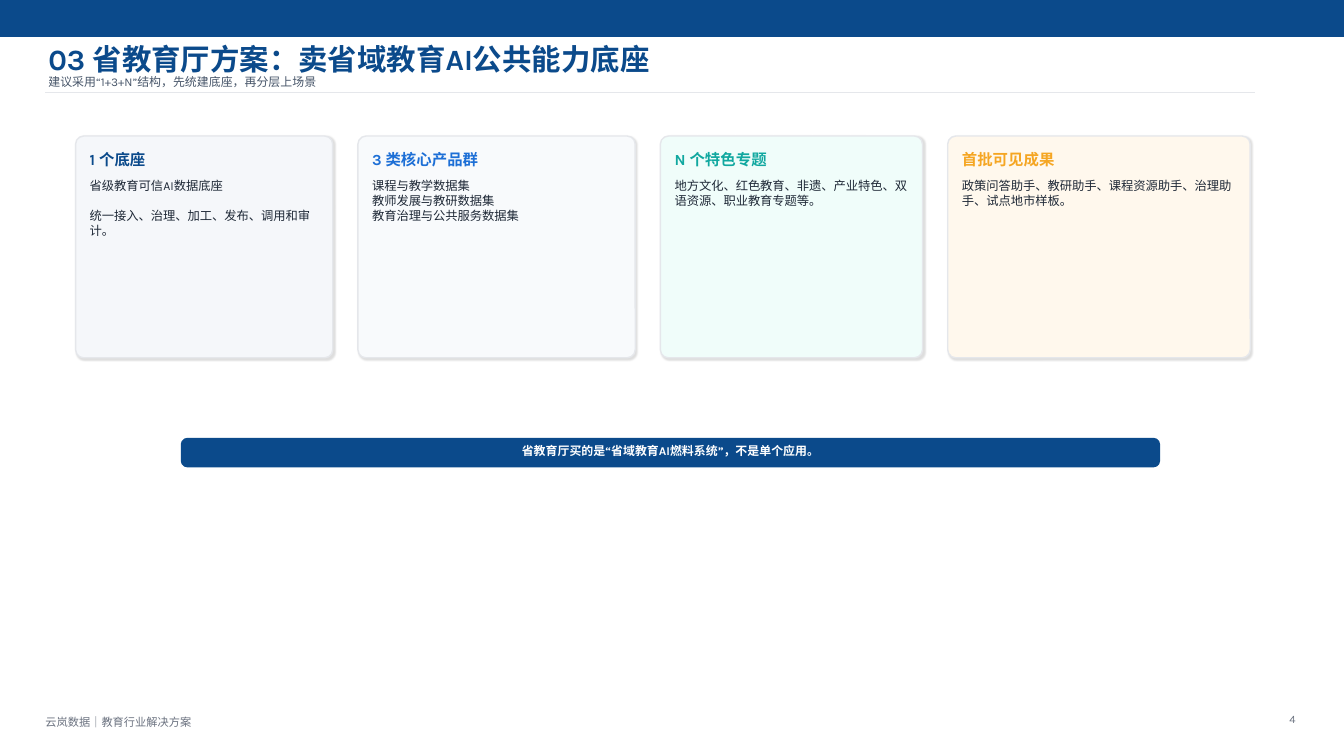
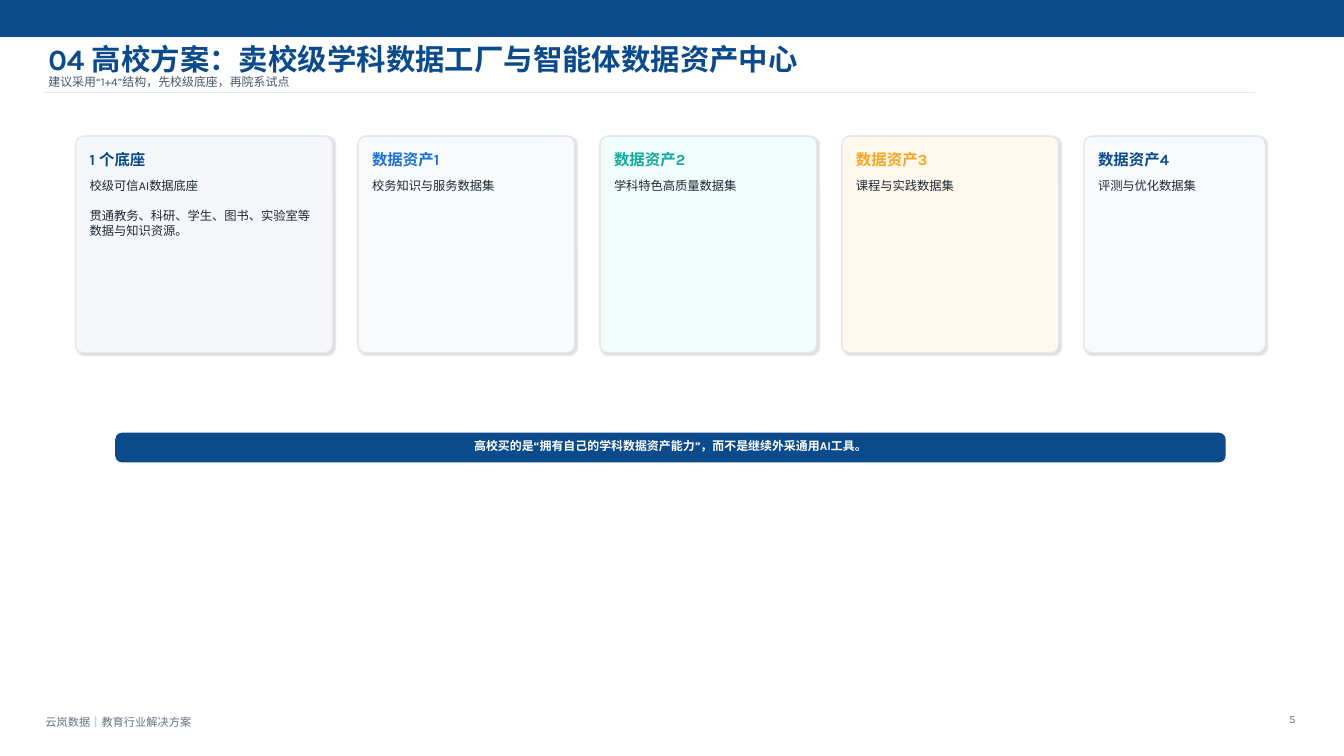
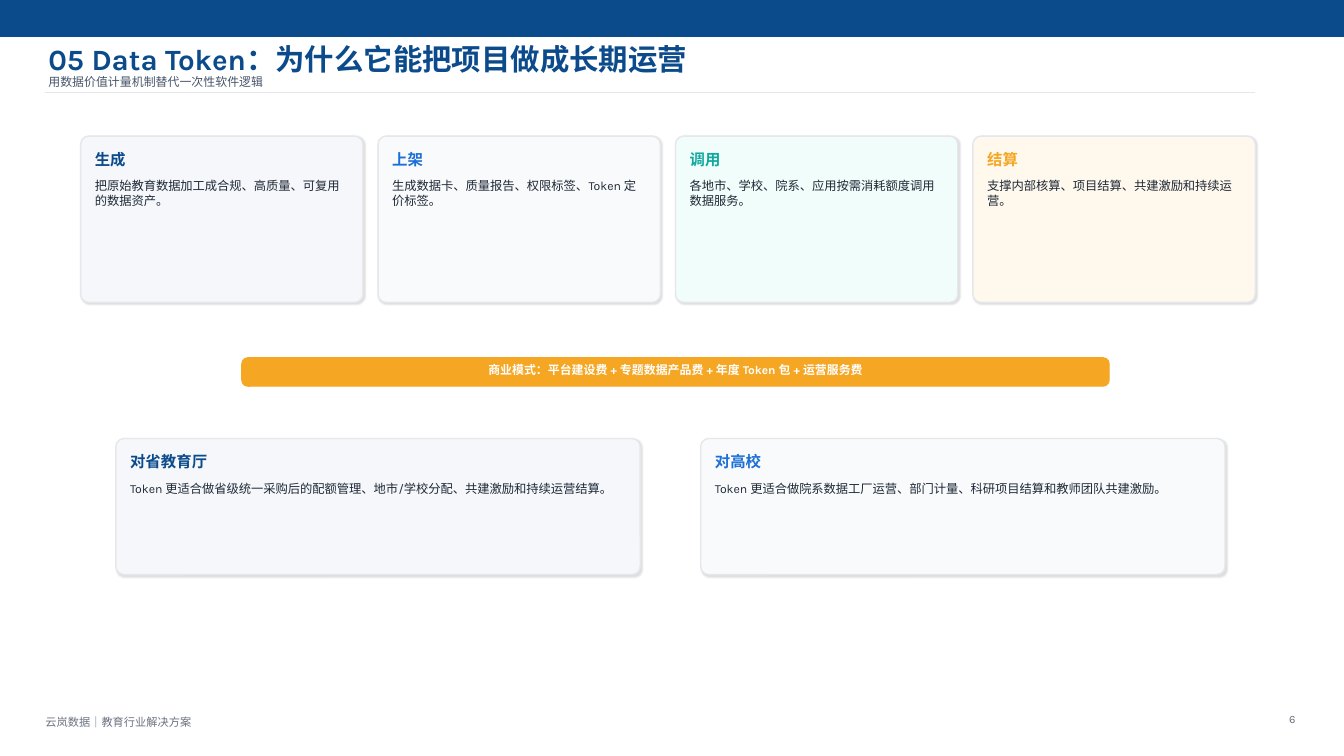
from dataclasses import dataclass
from itertools import accumulate

from lxml.etree import SubElement
from pptx import Presentation
from pptx.dml.color import RGBColor
from pptx.enum.shapes import MSO_CONNECTOR as Connector
from pptx.enum.shapes import MSO_SHAPE as Shape
from pptx.enum.text import MSO_ANCHOR as Anchor
from pptx.enum.text import MSO_AUTO_SIZE as AutoSize
from pptx.enum.text import PP_ALIGN as Align
from pptx.oxml.ns import qn
from pptx.util import Inches, Pt


@dataclass(frozen=True)
class Theme:
    font: str = "Karla"
    navy: str = "0B4A8B"
    blue: str = "1D6FD6"
    teal: str = "11A8A0"
    amber: str = "F5A623"
    white: str = "FFFFFF"
    ink: str = "1F2937"
    slate: str = "475569"
    muted: str = "6B7280"
    border: str = "E5E7EB"
    mist: str = "F5F7FA"
    snow: str = "F8FAFC"
    mint: str = "F0FDFA"
    cream: str = "FFF8ED"
    title_size: float = 21
    heading_size: float = 11
    body_size: float = 8.8
    note_size: float = 8.5
    footer_size: float = 8
    section_gap: float = 10.7


THEME = Theme()
CARD_STYLES = [
    (THEME.mist, THEME.navy),
    (THEME.snow, THEME.blue),
    (THEME.mint, THEME.teal),
    (THEME.cream, THEME.amber),
    (THEME.snow, THEME.navy),
]
FOOTER = "云岚数据｜教育行业解决方案"
CARD_TOP = 1.35


def rgb(value):
    return RGBColor.from_string(value)


def place(shape, left, top, width, height):
    shape.left, shape.top = Inches(left), Inches(top)
    shape.width, shape.height = Inches(width), Inches(height)


def write(shape, lines, size, color, bold=False, align=Align.LEFT,
          anchor=Anchor.MIDDLE, gap=0, margins=(0, 0, 0, 0)):
    frame = shape.text_frame
    frame.word_wrap = True
    frame.auto_size = AutoSize.NONE
    frame.vertical_anchor = anchor
    left, top, right, bottom = map(Inches, margins)
    frame.margin_left, frame.margin_top = left, top
    frame.margin_right, frame.margin_bottom = right, bottom
    for index, line in enumerate(lines):
        para = frame.add_paragraph() if index else frame.paragraphs[0]
        para.alignment = align
        para.space_before = Pt(gap if index else 0)
        span = para.add_run()
        span.text = line
        font = span.font
        font.size, font.bold, font.name = Pt(size), bold, THEME.font
        font.color.rgb = rgb(color)
        for script in ("a:ea", "a:cs"):
            SubElement(span.font._element, qn(script), typeface=THEME.font)


def add_text(page, area, lines, size, color, **options):
    box = page.shapes.add_textbox(*map(Inches, area))
    write(box, lines, size, color, **options)


def add_panel(page, kind, area, fill, line, radius=0):
    panel = page.shapes.add_shape(kind, *map(Inches, area))
    panel.shadow.inherit = False
    panel.fill.solid()
    panel.fill.fore_color.rgb = rgb(fill)
    panel.line.color.rgb = rgb(line)
    panel.line.width = Pt(1)
    if radius:
        panel.adjustments[0] = radius / min(area[2:])
    return panel


def add_soft_shadow(panel):
    effects = panel.element.spPr.find(qn("a:effectLst"))
    shadow = SubElement(effects, qn("a:outerShdw"), blurRad=str(Pt(1.2)),
                        dist=str(Pt(1.2)), dir=str(45 * 60000),
                        algn="bl", rotWithShape="0")
    color = SubElement(shadow, qn("a:srgbClr"), val="000000")
    SubElement(color, qn("a:alpha"), val="12000")


def add_rule(page, left, right, top):
    rule = page.shapes.add_connector(
        Connector.STRAIGHT, *map(Inches, (left, top, right, top)))
    rule.line.color.rgb = rgb(THEME.border)
    rule.line.width = Pt(1)
    SubElement(rule.element.spPr, qn("a:effectLst"))


def add_page(deck, number, title, subtitle):
    page = deck.slides.add_slide(deck.slide_layouts[5])
    add_panel(page, Shape.RECTANGLE, (0, 0, 13.33, 0.36), THEME.navy, THEME.navy)
    add_rule(page, 0.45, 12.45, 0.92)
    place(page.shapes.title, 0.48, 0.42, 9.8, 0.32)
    write(page.shapes.title, [title], THEME.title_size, THEME.navy, bold=True)
    add_text(page, (0.48, 0.72, 8.5, 0.18), [subtitle], THEME.note_size, THEME.slate)
    add_text(page, (0.45, 7.08, 3.8, 0.16), [FOOTER], THEME.footer_size, THEME.muted)
    add_text(page, (12.55, 7.05, 0.3, 0.16), [str(number)], THEME.footer_size,
             THEME.muted, align=Align.RIGHT)
    return page


def add_card(page, area, style, heading, lines, gap):
    left, top, width, height = area
    fill, accent = style
    add_soft_shadow(add_panel(page, Shape.ROUNDED_RECTANGLE, area, fill,
                              THEME.border, radius=0.08))
    inner_left, inner_width = left + 0.14, width - 0.28
    add_text(page, (inner_left, top + 0.12, inner_width, 0.22), [heading],
             THEME.heading_size, accent, bold=True)
    add_text(page, (inner_left, top + 0.42, inner_width, height - 0.52), lines,
             THEME.body_size, THEME.ink, anchor=Anchor.TOP, gap=gap)


def add_card_row(page, left, top, height, widths, spacing, cards):
    lefts = accumulate((width + spacing for width in widths), initial=left)
    for card_left, width, style, (heading, lines, gap) in zip(
            lefts, widths, CARD_STYLES, cards):
        add_card(page, (card_left, top, width, height), style, heading, lines, gap)


def add_banner(page, left, top, width, text, fill):
    banner = add_panel(page, Shape.ROUNDED_RECTANGLE, (left, top, width, 0.28),
                       fill, fill, radius=0.06)
    write(banner, [text], THEME.note_size, THEME.white, bold=True,
          align=Align.CENTER, margins=(0.06, 0, 0.06, 0.04))


def build_province(deck):
    page = add_page(deck, 4, "03 省教育厅方案：卖省域教育AI公共能力底座",
                    "建议采用“1+3+N”结构，先统建底座，再分层上场景")
    add_card_row(page, 0.75, CARD_TOP, 2.2, [2.55, 2.75, 2.6, 3], 0.25, [
        ("1 个底座", ["省级教育可信AI数据底座",
                   "统一接入、治理、加工、发布、调用和审计。"], THEME.section_gap),
        ("3 类核心产品群", ["课程与教学数据集", "教师发展与教研数据集",
                       "教育治理与公共服务数据集"], 0),
        ("N 个特色专题",
         ["地方文化、红色教育、非遗、产业特色、双语资源、职业教育专题等。"], 0),
        ("首批可见成果",
         ["政策问答助手、教研助手、课程资源助手、治理助手、试点地市样板。"], 0),
    ])
    add_banner(page, 1.8, 4.35, 9.7,
               "省教育厅买的是“省域教育AI燃料系统”，不是单个应用。", THEME.navy)


def build_university(deck):
    page = add_page(deck, 5, "04 高校方案：卖校级学科数据工厂与智能体数据资产中心",
                    "建议采用“1+4”结构，先校级底座，再院系试点")
    assets = ["校务知识与服务数据集", "学科特色高质量数据集",
              "课程与实践数据集", "评测与优化数据集"]
    base = ("1 个底座", ["校级可信AI数据底座",
                      "贯通教务、科研、学生、图书、实验室等数据与知识资源。"],
            THEME.section_gap)
    cards = [base] + [(f"数据资产{index}", [asset], 0)
                      for index, asset in enumerate(assets, 1)]
    add_card_row(page, 0.75, CARD_TOP, 2.15, [2.55, 2.15, 2.15, 2.15, 1.8],
                 0.25, cards)
    add_banner(page, 1.15, 4.3, 11,
               "高校买的是“拥有自己的学科数据资产能力”，而不是继续外采通用AI工具。",
               THEME.navy)


def build_token(deck):
    page = add_page(deck, 6, "05 Data Token：为什么它能把项目做成长期运营",
                    "用数据价值计量机制替代一次性软件逻辑")
    add_card_row(page, 0.8, CARD_TOP, 1.65, [2.8] * 4, 0.15, [
        ("生成", ["把原始教育数据加工成合规、高质量、可复用的数据资产。"], 0),
        ("上架", ["生成数据卡、质量报告、权限标签、Token 定价标签。"], 0),
        ("调用", ["各地市、学校、院系、应用按需消耗额度调用数据服务。"], 0),
        ("结算", ["支撑内部核算、项目结算、共建激励和持续运营。"], 0),
    ])
    add_banner(page, 2.4, 3.55, 8.6,
               "商业模式：平台建设费 + 专题数据产品费 + 年度 Token 包 + 运营服务费",
               THEME.amber)
    add_card_row(page, 1.15, 4.35, 1.35, [5.2] * 2, 0.6, [
        ("对省教育厅",
         ["Token 更适合做省级统一采购后的配额管理、地市/学校分配、共建激励和持续运营结算。"], 0),
        ("对高校",
         ["Token 更适合做院系数据工厂运营、部门计量、科研项目结算和教师团队共建激励。"], 0),
    ])


def main():
    deck = Presentation()
    deck.slide_width, deck.slide_height = Inches(13.33), Inches(7.5)
    build_province(deck)
    build_university(deck)
    build_token(deck)
    deck.save("out.pptx")


if __name__ == "__main__":
    main()
